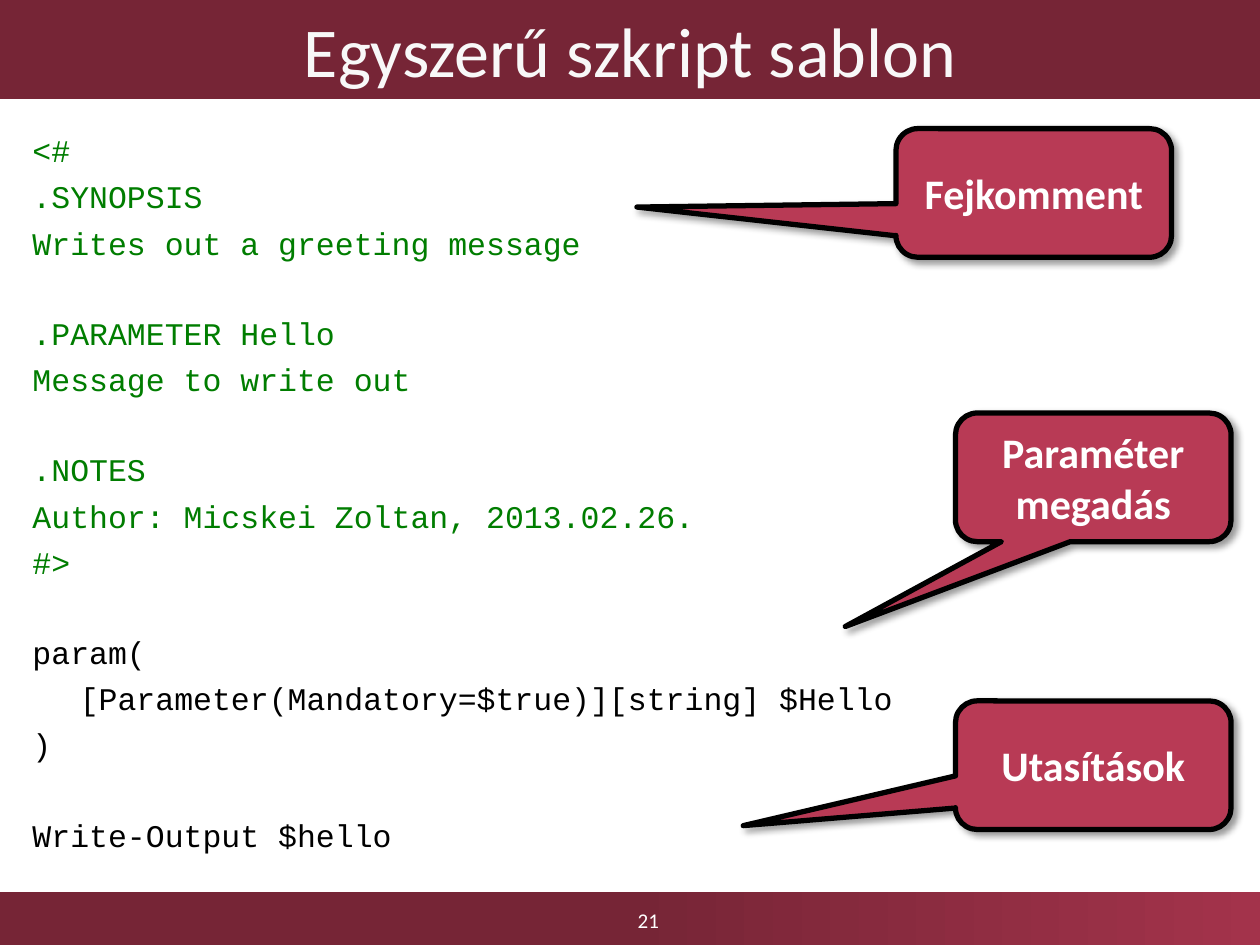
from copy import deepcopy

from lxml.etree import SubElement
from pptx import Presentation
from pptx.dml.color import RGBColor
from pptx.enum.shapes import MSO_SHAPE as SHAPE
from pptx.enum.text import MSO_ANCHOR as ANCHOR, PP_ALIGN as ALIGN
from pptx.oxml.ns import qn
from pptx.util import Pt

COLORS = {
    "wine": "762536", "rose": "A3334B", "callout": "B83A55",
    "comment": "007D00", "code": "000000", "line": "000000",
    "title": "F8F8F8", "white": "FFFFFF",
}
W, H = 720, 540
LINE_GAP, BLANK_LINE = 4.8, 25.2
INDENT = 27

# Code blocks, parted by one line of space
BLOCKS = [
    ("comment", ["<#", ".SYNOPSIS", "Writes out a greeting message"]),
    ("comment", [".PARAMETER Hello", "Message to write out"]),
    ("comment", [".NOTES", "Author: Micskei Zoltan, 2013.02.26.", "#>"]),
    ("code", ["param(", "\t[Parameter(Mandatory=$true)][string] $Hello", ")"]),
    ("code", ["Write-Output $hello"]),
]

# Callouts: text, left, top, pointer x and y
CALLOUTS = [
    ("Fejkomment", 512, 73.5, -1.44, 0.11),
    ("Paraméter megadás", 546, 236, -0.9, 1.16),
    ("Utasítások", 546, 400.5, -1.27, 0.47),
]
CALLOUT_SIZE = (157.5, 73.5)


def rgb(name):
    return RGBColor.from_string(COLORS[name])


def add_run(p, text, size, color, font="Calibri", bold=False):
    r = p.add_run()
    r.text = text
    r.font.size, r.font.name, r.font.bold = Pt(size), font, bold
    r.font.color.rgb = rgb(color)


def add_label(sp, text, size, color, bold=False):
    tf = sp.text_frame
    tf.word_wrap = True
    tf.vertical_anchor = ANCHOR.MIDDLE
    p = tf.paragraphs[0]
    p.alignment = ALIGN.CENTER
    add_run(p, text, size, color, bold=bold)


def add_bar(s, box):
    sp = s.shapes.add_shape(SHAPE.RECTANGLE, *map(Pt, box))
    sp.shadow.inherit = False
    sp.line.fill.background()
    return sp


def add_title(s, box, text):
    sp = add_bar(s, box)
    sp.fill.solid()
    sp.fill.fore_color.rgb = rgb("wine")
    add_label(sp, text, 40, "title")


def add_footer(s, box, number):
    left, top, width, height = box
    sp = add_bar(s, box)
    # Plain to the middle, then lighter to the right
    sp.fill.gradient()
    sp.fill.gradient_angle = 0
    stops = sp.fill.gradient_stops
    for stop, color in zip(stops, ("wine", "rose")):
        stop.color.rgb = rgb(color)
    stops[0].position, stops[1].position = 0, 1
    first = sp.element.spPr.find(".//" + qn("a:gs"))
    middle = deepcopy(first)
    middle.set("pos", "50000")
    first.addnext(middle)
    # Page number
    num_w = 234
    tb = s.shapes.add_textbox(Pt(left + (width - num_w) / 2 + 10.5), Pt(top + 2),
                              Pt(num_w), Pt(height - 2))
    add_label(tb, number, 12, "white")


def add_code(s, box, blocks):
    tf = s.shapes.add_textbox(*map(Pt, box)).text_frame
    tf.word_wrap = True
    tf.margin_top = Pt(7.5)
    p = tf.paragraphs[0]
    for b, (color, lines) in enumerate(blocks):
        for i, line in enumerate(lines):
            if b or i:
                p = tf.add_paragraph()
                p.space_before = Pt(LINE_GAP if i else LINE_GAP + BLANK_LINE)
            pPr = p._p.get_or_add_pPr()
            pPr.set("marL", str(Pt(INDENT)))
            pPr.set("indent", str(-Pt(INDENT)))
            add_run(p, line, 18, color, font="Courier New")


def add_callout(s, box, text, tip):
    sp = s.shapes.add_shape(SHAPE.ROUNDED_RECTANGULAR_CALLOUT, *map(Pt, box))
    for i, value in enumerate((*tip, 0.17)):
        sp.adjustments[i] = value
    sp.fill.solid()
    sp.fill.fore_color.rgb = rgb("callout")
    sp.line.color.rgb = rgb("line")
    sp.line.width = Pt(3)
    # Soft shadow, down to the right
    sp.shadow.inherit = False
    effects = sp.element.spPr.find(qn("a:effectLst"))
    shadow = SubElement(effects, qn("a:outerShdw"), blurRad=str(Pt(4)),
                        dist=str(Pt(3)), dir="2700000", algn="tl", rotWithShape="0")
    color = SubElement(shadow, qn("a:srgbClr"), val=COLORS["line"])
    SubElement(color, qn("a:alpha"), val="40000")
    add_label(sp, text, 24, "white", bold=True)


def main():
    prs = Presentation()
    prs.slide_width, prs.slide_height = Pt(W), Pt(H)
    s = prs.slides.add_slide(prs.slide_layouts[6])
    add_footer(s, (0, 510, W, 30), "21")
    add_title(s, (0, 0, W, 56.5), "Egyszerű szkript sablon")
    add_code(s, (11.5, 67.5, 698, 435.5), BLOCKS)
    for text, left, top, *tip in CALLOUTS:
        add_callout(s, (left, top, *CALLOUT_SIZE), text, tip)
    prs.save("out.pptx")


if __name__ == "__main__":
    main()
